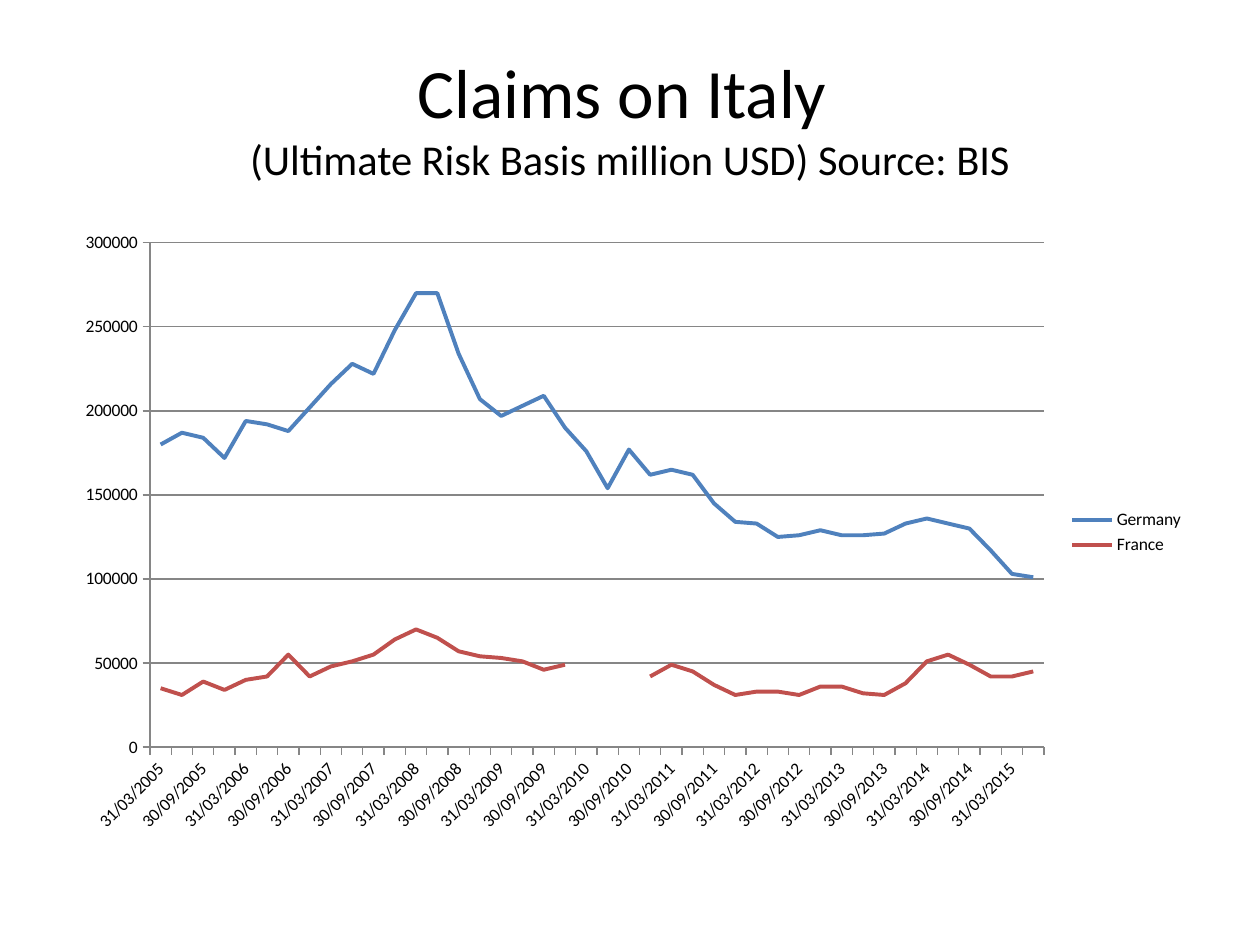
from pptx import Presentation
from pptx.chart.data import CategoryChartData
from pptx.dml.color import RGBColor
from pptx.enum.chart import XL_CHART_TYPE as ChartType, XL_LEGEND_POSITION as LegendPos, XL_TICK_MARK as Tick
from pptx.enum.text import MSO_ANCHOR as Anchor, MSO_AUTO_SIZE as AutoSize, PP_ALIGN as Align
from pptx.util import Pt

BLACK = RGBColor(0x00, 0x00, 0x00)
GRAY = RGBColor(0x86, 0x86, 0x86)
BLUE = RGBColor(0x4F, 0x81, 0xBD)
RED = RGBColor(0xC0, 0x50, 0x4D)

QUARTER_ENDS = ["31/03", "30/06", "30/09", "31/12"]
DATES = [f"{day}/{year}" for year in range(2005, 2016) for day in QUARTER_ENDS][:42]
GERMANY = [
    180, 187, 184, 172, 194, 192, 188, 202, 216, 228, 222, 248, 270, 270,
    234, 207, 197, 203, 209, 190, 176, 154, 177, 162, 165, 162, 145, 134,
    133, 125, 126, 129, 126, 126, 127, 133, 136, 133, 130, 117, 103, 101,
]
FRANCE = [
    35, 31, 39, 34, 40, 42, 55, 42, 48, 51, 55, 64, 70, 65,
    57, 54, 53, 51, 46, 49, None, None, None, 42, 49, 45, 37, 31,
    33, 33, 31, 36, 36, 32, 31, 38, 51, 55, 49, 42, 42, 45,
]


class Deck:
    font = "Calibri"

    def __init__(self, width, height):
        self.prs = Presentation()
        self.prs.slide_width, self.prs.slide_height = Pt(width), Pt(height)
        self.s = self.prs.slides.add_slide(self.prs.slide_layouts[5])

    def title(self, x, y, w, h, lines):
        sp = self.s.shapes.title
        sp.left, sp.top, sp.width, sp.height = Pt(x), Pt(y), Pt(w), Pt(h)
        tf = sp.text_frame
        tf.auto_size = AutoSize.NONE
        tf.vertical_anchor = Anchor.MIDDLE
        p = tf.paragraphs[0]
        p.alignment = Align.CENTER
        p.font.name = self.font
        p.font.color.rgb = BLACK
        for i, (text, size) in enumerate(lines):
            if i:
                p.add_line_break()
            r = p.add_run()
            r.text = text
            r.font.size = Pt(size)

    def line_chart(self, x, y, w, h, categories, series):
        data = CategoryChartData(number_format="General")
        data.categories = categories
        for name, thousands, _ in series:
            data.add_series(name, [None if v is None else v * 1000 for v in thousands])
        chart = self.s.shapes.add_chart(
            ChartType.LINE, Pt(x), Pt(y), Pt(w), Pt(h), data).chart
        chart.has_title = False
        chart.font.name = self.font
        chart.font.size = Pt(10)
        chart.font.color.rgb = BLACK
        chart.has_legend = True
        chart.legend.position = LegendPos.RIGHT
        chart.legend.include_in_layout = False
        plot = chart.plots[0]
        plot.vary_by_categories = False
        for line, (_, _, color) in zip(plot.series, series):
            line.smooth = False
            line.format.line.color.rgb = color
            line.format.line.width = Pt(2.25)
        for axis in (chart.category_axis, chart.value_axis):
            axis.major_tick_mark = Tick.OUTSIDE
            axis.minor_tick_mark = Tick.NONE
            axis.format.line.color.rgb = GRAY
        axis = chart.value_axis
        axis.minimum_scale, axis.maximum_scale, axis.major_unit = 0, 300000, 50000
        axis.has_major_gridlines = True
        axis.major_gridlines.format.line.color.rgb = GRAY

    def save(self):
        self.prs.save("out.pptx")


def main():
    deck = Deck(720, 540)
    deck.title(36, 21.6, 648, 90, [
        ("Claims on Italy ", 39.6),
        ("(Ultimate Risk Basis million USD) Source: BIS", 24.3),
    ])
    deck.line_chart(36, 126, 648, 356.4, DATES, [
        ("Germany", GERMANY, BLUE),
        ("France", FRANCE, RED),
    ])
    deck.save()


if __name__ == "__main__":
    main()
